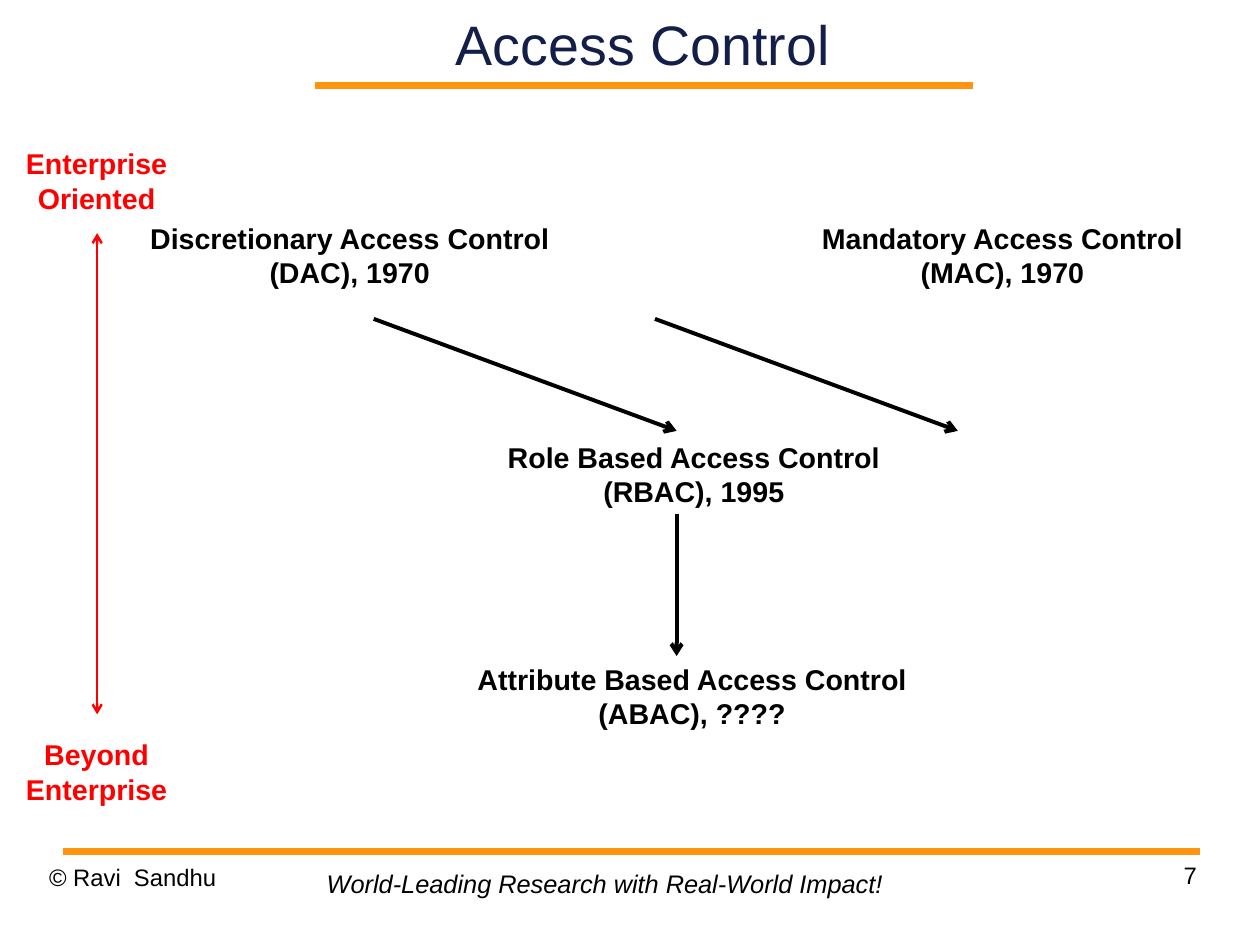
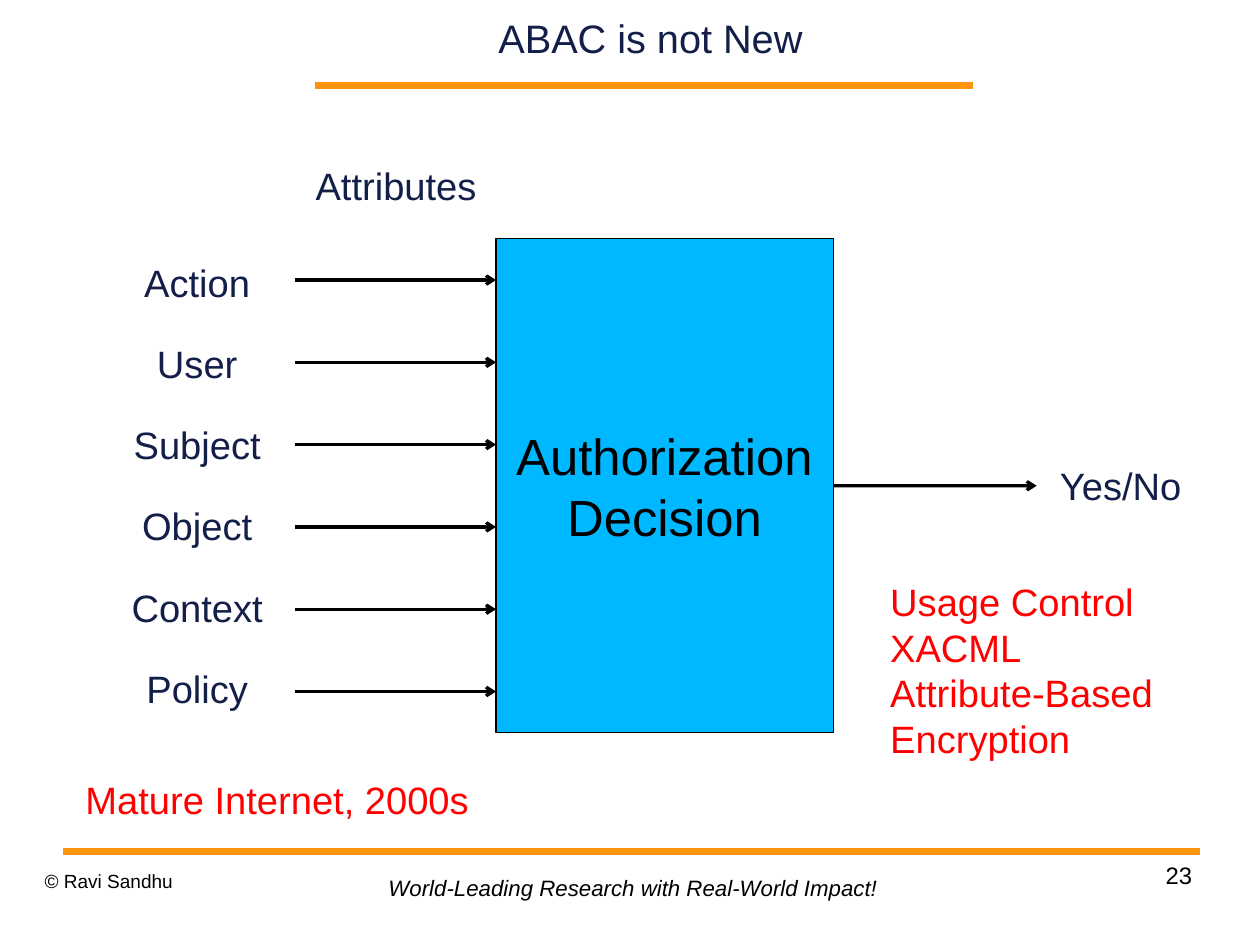
from pptx import Presentation
from pptx.dml.color import RGBColor
from pptx.enum.shapes import MSO_CONNECTOR, MSO_SHAPE
from pptx.enum.text import MSO_ANCHOR, PP_ALIGN
from pptx.oxml.ns import qn
from pptx.util import Inches, Pt
from lxml import etree

LEFT, CENTER, RIGHT = PP_ALIGN.LEFT, PP_ALIGN.CENTER, PP_ALIGN.RIGHT
TOP, MIDDLE = MSO_ANCHOR.TOP, MSO_ANCHOR.MIDDLE
STRAIGHT = MSO_CONNECTOR.STRAIGHT
RECT = MSO_SHAPE.RECTANGLE

BLACK = RGBColor(0x00, 0x00, 0x00)
NAVY = RGBColor(0x13, 0x1F, 0x49)
RED = RGBColor(0xFF, 0x00, 0x00)
ORANGE = RGBColor(0xFF, 0x95, 0x0E)
BLUE = RGBColor(0x00, 0xB8, 0xFF)
FONT = "Arial"
PAD = (0.1, 0.05)
FLUSH = (0, 0)
MOTTO = "World-Leading Research with Real-World Impact!"

# The page is 28 by 21 cm
WIDTH, HEIGHT = Inches(28 / 2.54), Inches(21 / 2.54)


def write(shape, lines, size, color, align=CENTER, anchor=TOP, pad=PAD,
          wrap=True, bold=False, italic=False):
    """Fill a shape with one paragraph per line."""
    frame = shape.text_frame
    frame.word_wrap = wrap
    frame.vertical_anchor = anchor
    frame.margin_left = frame.margin_right = Inches(pad[0])
    frame.margin_top = frame.margin_bottom = Inches(pad[1])
    frame.text = "\n".join(lines)
    for para in frame.paragraphs:
        para.alignment = align
        font = para.font
        font.name, font.size = FONT, Pt(size)
        font.bold, font.italic = bold, italic
        font.color.rgb = color


def label(slide, at, lines, size, color, **style):
    box = slide.shapes.add_textbox(*map(Inches, at))
    write(box, lines, size, color, **style)


def rule(slide, start, end, color, width, ends=()):
    """Draw a straight line; ends lists the arrowheads, headEnd first."""
    line = slide.shapes.add_connector(STRAIGHT, *map(Inches, start + end))
    line.line.color.rgb = color
    line.line.width = Pt(width)
    props = line._element.spPr
    for tag in ends:
        etree.SubElement(props.find(qn("a:ln")), qn("a:" + tag), type="arrow")
    etree.SubElement(props, qn("a:effectLst"))
    return line


def arrow(slide, start, end, width):
    return rule(slide, start, end, BLACK, width, ["tailEnd"])


def new_slide(deck, title, area, size):
    """Add a slide with its title and the two orange bands."""
    slide = deck.slides.add_slide(deck.slide_layouts[6])
    rule(slide, (2.76, 0.75), (8.51, 0.75), ORANGE, 4.31)
    rule(slide, (0.55, 7.45), (10.5, 7.45), ORANGE, 4.31)
    label(slide, area, [title], size, NAVY, anchor=MIDDLE, pad=FLUSH)
    return slide


def footer(slide, owner, owner_at, owner_size, motto_at, motto_size,
           number, number_x):
    label(slide, owner_at, [owner], owner_size, BLACK, align=LEFT, pad=FLUSH)
    label(slide, motto_at, [MOTTO], motto_size, BLACK, align=LEFT,
          wrap=False, italic=True)
    label(slide, (number_x, 7.53, 2.57, 0.57), [number], 15, BLACK,
          align=RIGHT, pad=FLUSH)


def models(deck):
    slide = new_slide(deck, "Access Control", (2.41, 0, 6.43, 0.75), 35)
    footer(slide, "© Ravi  Sandhu", (0.43, 7.55, 2.57, 0.57), 15,
           (2.76, 7.55, 5.18, 0.37), 16, "7", 7.9)

    # Access control models
    for x, y, width, text in (
            (1.21, 1.88, 3.7, "Discretionary Access Control (DAC), 1970"),
            (6.92, 1.88, 3.7, "Mandatory Access Control (MAC), 1970"),
            (4.22, 3.8, 3.7, "Role Based Access Control (RBAC), 1995"),
            (4, 5.74, 4.11, "Attribute Based Access Control (ABAC), ????")):
        label(slide, (x, y, width, 0.71), [text], 18, BLACK, bold=True)

    # Succession arrows
    for x in (3.27, 5.73):
        arrow(slide, (x, 2.79), (x + 2.65, 3.77), 2.5)
    arrow(slide, (5.92, 4.5), (5.92, 5.74), 2.5)

    # Enterprise scale
    rule(slide, (0.85, 2.04), (0.85, 6.25), RED, 1.5, ["headEnd", "tailEnd"])
    for y, lines in ((1.23, ("Enterprise", "Oriented")),
                     (6.4, ("Beyond", "Enterprise"))):
        label(slide, (0.12, y, 1.45, 0.71), lines, 18, RED,
              wrap=False, bold=True)


def decision(deck):
    slide = new_slide(deck, "ABAC is not New", (2.85, 0.05, 5.68, 0.56), 25)
    footer(slide, "© Ravi Sandhu", (0.39, 7.61, 2.57, 0.43), 12,
           (3.3, 7.6, 4.58, 0.33), 14, "23", 7.86)

    # Decision box
    box = slide.shapes.add_shape(RECT, *map(Inches, (4.34, 2.09, 2.95, 4.32)))
    box.shadow.inherit = False
    box.fill.solid()
    box.fill.fore_color.rgb = BLUE
    box.line.color.rgb = BLACK
    box.line.width = Pt(0.75)
    write(box, ["Authorization Decision"], 32, BLACK, anchor=MIDDLE)

    # Attributes going in
    label(slide, (2.66, 1.37, 1.61, 0.5), ["Attributes"], 24, NAVY)
    names = ("Action", "User", "Subject", "Object", "Context", "Policy")
    for row, name in enumerate(names):
        label(slide, (1.03, 2.22 + 0.71 * row, 1.39, 0.5), [name], 24, NAVY)
        y = 2.45 + 0.72 * row
        arrow(slide, (2.58, y), (4.34, y), 2)

    # Answer coming out
    out = arrow(slide, (7.29, 4.25), (9.07, 4.25), 2)
    out.begin_connect(box, 3)
    label(slide, (9.11, 4, 1.39, 0.5), ["Yes/No"], 24, NAVY)

    # Remarks
    label(slide, (0.27, 6.74, 4.31, 0.5), ["Mature Internet, 2000s"], 24, RED)
    label(slide, (7.69, 5.01, 2.87, 1.72),
          ["Usage Control", "XACML", "Attribute-Based Encryption"],
          24, RED, align=LEFT)


def main():
    deck = Presentation()
    deck.slide_width, deck.slide_height = WIDTH, HEIGHT
    models(deck)
    decision(deck)
    deck.save("out.pptx")


if __name__ == "__main__":
    main()
